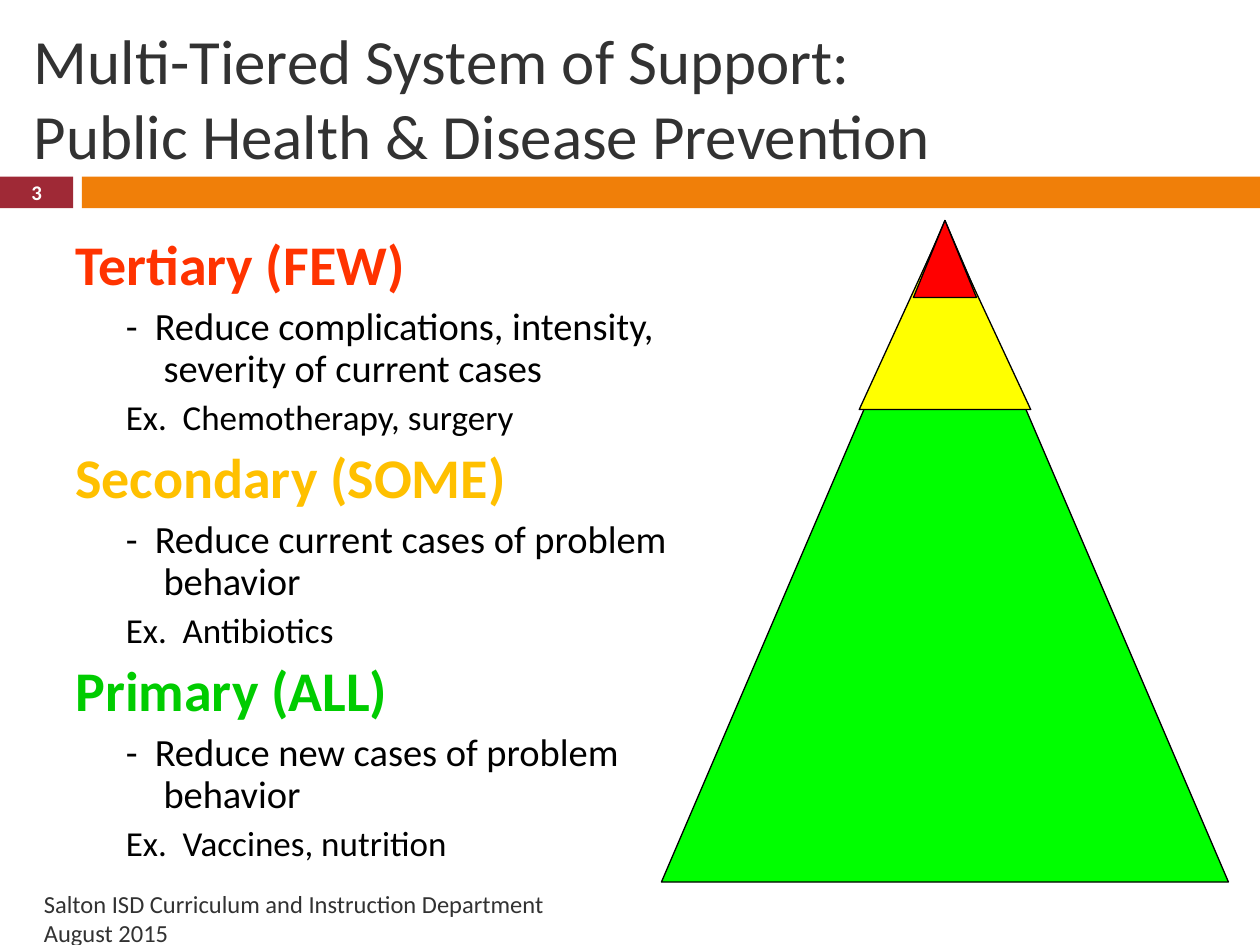
from typing import NamedTuple

from pptx import Presentation
from pptx.dml.color import RGBColor
from pptx.enum.shapes import MSO_SHAPE as Shape
from pptx.enum.text import MSO_ANCHOR as Anchor, PP_ALIGN as Align
from pptx.util import Pt

WHITE = RGBColor(0xFF, 0xFF, 0xFF)
BLACK = RGBColor(0x00, 0x00, 0x00)
CHARCOAL = RGBColor(0x32, 0x32, 0x32)
MAROON = RGBColor(0x9F, 0x29, 0x36)
ORANGE = RGBColor(0xF0, 0x7F, 0x09)
RED = RGBColor(0xFF, 0x00, 0x00)
YELLOW = RGBColor(0xFF, 0xFF, 0x00)
GREEN = RGBColor(0x00, 0xFF, 0x00)
RED_TEXT = RGBColor(0xFF, 0x33, 0x00)
GOLD_TEXT = RGBColor(0xFF, 0xC0, 0x00)
GREEN_TEXT = RGBColor(0x00, 0xCC, 0x00)


class Area(NamedTuple):
    left: float
    top: float
    width: float
    height: float

    def lengths(self) -> list:
        return [Pt(value) for value in self]


class Tier(NamedTuple):
    heading: str
    color: RGBColor
    goal: str
    example: str


class Layer(NamedTuple):
    area: Area
    apex: float
    fill: RGBColor


TIERS = [
    Tier("Tertiary (FEW)", RED_TEXT,
         "-  Reduce complications, intensity, severity of current cases",
         "Ex.  Chemotherapy, surgery"),
    Tier("Secondary (SOME)", GOLD_TEXT,
         "-  Reduce current cases of problem behavior", "Ex.  Antibiotics"),
    Tier("Primary (ALL)", GREEN_TEXT,
         "-  Reduce new cases of problem behavior", "Ex.  Vaccines, nutrition"),
]

LAYERS = [
    Layer(Area(378, 126, 324, 378), 0.5, GREEN),
    Layer(Area(491, 128, 98, 106), 0.496, YELLOW),
    Layer(Area(522, 126, 36, 44), 0.5, RED),
]

BADGE = Area(0, 101, 41.76, 18)
BAND = Area(46.8, 101, 673.2, 18)


def add_frame(page, area: Area, anchor=Anchor.TOP, inset: float = 7.2):
    frame = page.shapes.add_textbox(*area.lengths()).text_frame
    frame.word_wrap = True
    frame.vertical_anchor = anchor
    frame.margin_left = frame.margin_right = Pt(inset)
    frame.margin_top = frame.margin_bottom = Pt(inset / 2)
    return frame


def write(para, text: str, *, size: float, color: RGBColor, bold: bool = False,
          align=Align.LEFT, before: float = 0, spacing: float = 1.0,
          margin: float = 0, hanging: float = 0) -> None:
    """Fill a paragraph; a vertical tab in the text becomes a line break."""
    para.text = text
    para.alignment = align
    para.space_before = Pt(before)
    para.line_spacing = spacing
    properties = para._p.get_or_add_pPr()
    properties.set("marL", str(Pt(margin)))
    properties.set("indent", str(-Pt(hanging)))
    for span in para.runs:
        span.font.name = "Calibri"
        span.font.size = Pt(size)
        span.font.bold = bold
        span.font.color.rgb = color


def add_filled(shapes, kind, area: Area, fill: RGBColor):
    shape = shapes.add_shape(kind, *area.lengths())
    shape.shadow.inherit = False
    shape.fill.solid()
    shape.fill.fore_color.rgb = fill
    shape.line.fill.background()
    return shape


def add_pyramid(page) -> None:
    group = page.shapes.add_group_shape()
    for layer in LAYERS:
        triangle = add_filled(group.shapes, Shape.ISOSCELES_TRIANGLE, layer.area, layer.fill)
        triangle.adjustments[0] = layer.apex
        triangle.line.color.rgb = BLACK
        triangle.line.width = Pt(0.75)


def add_tiers(page) -> None:
    frame = add_frame(page, Area(36, 132, 360, 378))
    detail = dict(color=BLACK, before=5.5, spacing=0.9, margin=50.4, hanging=21.6)
    for index, tier in enumerate(TIERS):
        heading = frame.add_paragraph() if index else frame.paragraphs[0]
        write(heading, tier.heading, size=32, color=tier.color, bold=True,
              before=7, spacing=0.9, margin=25.2, hanging=25.2)
        write(frame.add_paragraph(), tier.goal, size=22, **detail)
        write(frame.add_paragraph(), tier.example, size=20, **detail)


def main() -> None:
    deck = Presentation()
    deck.slide_width, deck.slide_height = Pt(720), Pt(540)
    page = deck.slides.add_slide(deck.slide_layouts[6])

    add_filled(page.shapes, Shape.RECTANGLE, BADGE, MAROON)
    add_filled(page.shapes, Shape.RECTANGLE, BAND, ORANGE)

    title = add_frame(page, Area(12.24, 0, 696, 102), Anchor.BOTTOM)
    write(title.paragraphs[0],
          "Multi-Tiered System of Support:\vPublic Health & Disease Prevention",
          size=36, color=CHARCOAL)

    add_tiers(page)
    add_pyramid(page)

    number = add_frame(page, BADGE, Anchor.MIDDLE, inset=0)
    write(number.paragraphs[0], "3", size=11.9, color=WHITE, bold=True, align=Align.CENTER)

    footer = add_frame(page, Area(18, 510, 678, 29), Anchor.MIDDLE)
    write(footer.paragraphs[0],
          "Salton ISD Curriculum and Instruction Department\vAugust 2015",
          size=14, color=CHARCOAL)

    deck.save("out.pptx")


if __name__ == "__main__":
    main()
